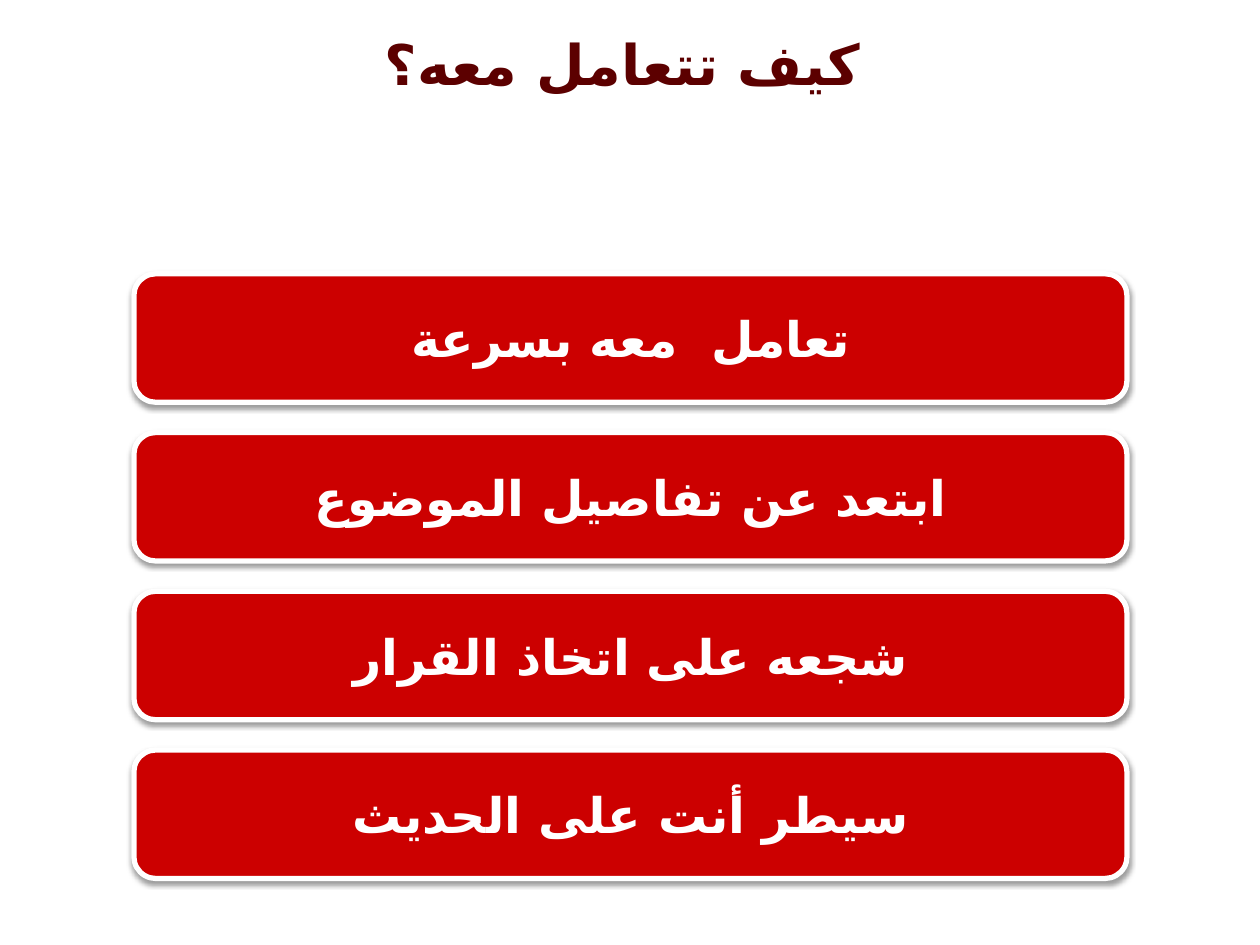
"""Build a right-to-left slide with a title and four advice bars."""
from lxml.etree import SubElement
from pptx import Presentation
from pptx.dml.color import RGBColor
from pptx.enum.shapes import MSO_SHAPE
from pptx.enum.text import MSO_ANCHOR, PP_ALIGN
from pptx.oxml.ns import qn
from pptx.util import Cm, Pt

TITLE = "كيف تتعامل معه؟"
ADVICE = [
    "تعامل  معه بسرعة",
    "ابتعد عن تفاصيل الموضوع",
    "شجعه على اتخاذ القرار",
    "سيطر أنت على الحديث",
]
ARABIC_FONT = "DejaVu Sans"
BAR_LEFT, BAR_TOP, BAR_WIDTH, BAR_HEIGHT, BAR_PITCH = 2.7, 5.52, 20.02, 2.59, 3.2


def paint(color_format, color):
    color_format.rgb = RGBColor.from_string(color)


def write(box, text, font_name, size, color):
    frame = box.text_frame
    frame.word_wrap = True
    frame.vertical_anchor = MSO_ANCHOR.MIDDLE
    para = frame.paragraphs[0]
    para.text = text
    para.alignment = PP_ALIGN.CENTER
    properties = para._p.get_or_add_pPr()
    properties.set("rtl", "1")
    font = para.font
    font.name, font.size, font.bold = font_name, Pt(size), True
    paint(font.color, color)
    SubElement(properties.find(qn("a:defRPr")), qn("a:cs"), typeface=ARABIC_FONT)


def add_shadow(shape):
    shape.shadow.inherit = False
    effects = shape._element.spPr.find(qn("a:effectLst"))
    shadow = SubElement(effects, qn("a:outerShdw"), blurRad=str(Pt(3.1)),
                        dist=str(Pt(1.6)), dir="5400000", rotWithShape="0")
    shade = SubElement(shadow, qn("a:srgbClr"), val="000000")
    SubElement(shade, qn("a:alpha"), val="38000")


def add_bar(page, index, text):
    bar = page.shapes.add_shape(
        MSO_SHAPE.ROUNDED_RECTANGLE, Cm(BAR_LEFT), Cm(BAR_TOP + index * BAR_PITCH),
        Cm(BAR_WIDTH), Cm(BAR_HEIGHT))
    bar.adjustments[0] = 0.17
    bar.fill.solid()
    paint(bar.fill.fore_color, "CC0000")
    paint(bar.line.color, "FFFFFF")
    bar.line.width = Pt(3)
    add_shadow(bar)
    write(bar, text, "Courier New", 28, "FFFFFF")


def main():
    deck = Presentation()
    deck.slide_width, deck.slide_height = Cm(25.4), Cm(19.05)
    page = deck.slides.add_slide(deck.slide_layouts[5])
    title = page.shapes.title
    title.left, title.top, title.width, title.height = Cm(0), Cm(0.13), Cm(25.1), Cm(2.29)
    write(title, TITLE, "Calibri", 32, "5C0000")
    for index, text in enumerate(ADVICE):
        add_bar(page, index, text)
    deck.save("out.pptx")


if __name__ == "__main__":
    main()
